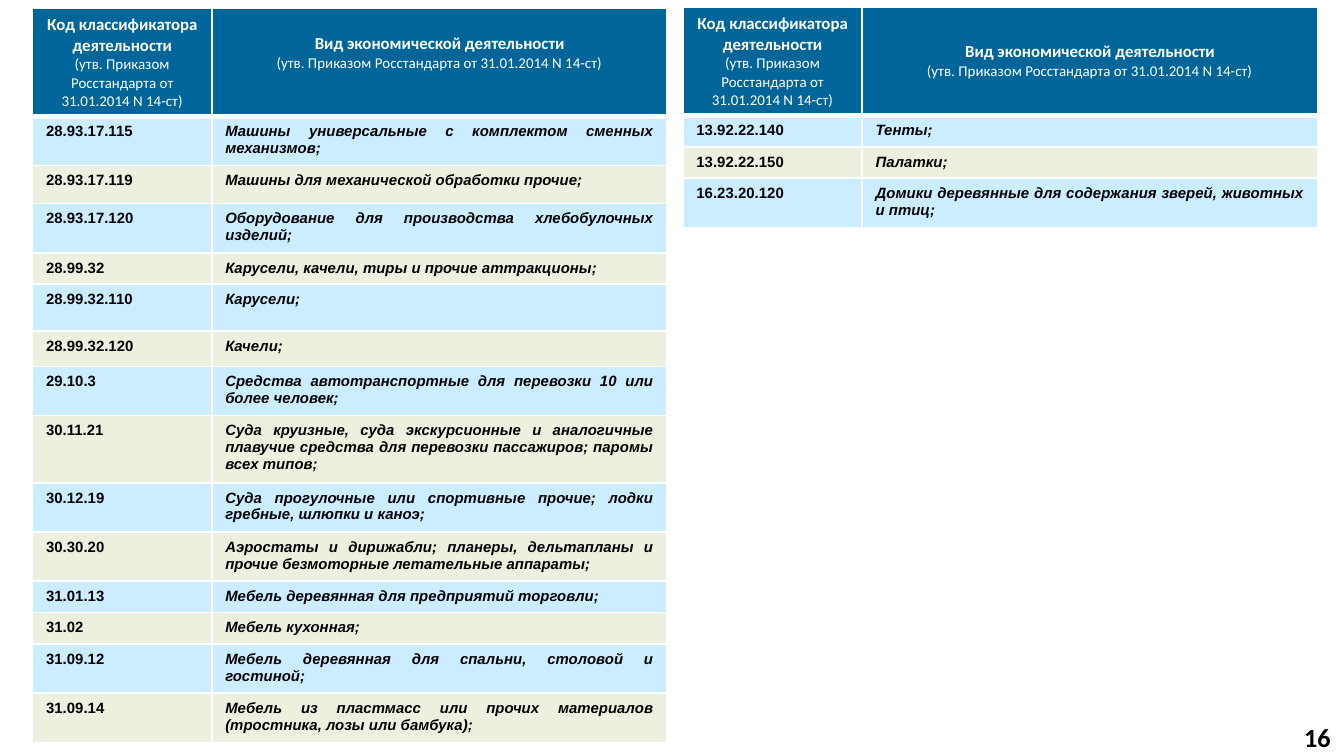
from lxml import etree
from pptx import Presentation
from pptx.dml.color import RGBColor
from pptx.enum.text import MSO_ANCHOR, PP_ALIGN
from pptx.oxml.ns import qn
from pptx.util import Pt

WHITE = RGBColor(0xFF, 0xFF, 0xFF)
BLACK = RGBColor(0x00, 0x00, 0x00)
HEADER = RGBColor(0x00, 0x66, 0x99)
BANDS = [RGBColor(0xCC, 0xEC, 0xFF), RGBColor(0xEB, 0xF1, 0xDE)]

ORDER = "(утв. Приказом Росстандарта от 31.01.2014 N 14-ст)"
HEADINGS = ["Код классификатора деятельности", "Вид экономической деятельности"]
COL_WIDTHS = [96, 244]
HEADER_HEIGHT = 58

LEFT_ROWS = [
    ("28.93.17.115", "Машины универсальные с комплектом сменных механизмов;", 25.4),
    ("28.93.17.119", "Машины для механической обработки прочие;", 20.4),
    ("28.93.17.120", "Оборудование для производства хлебобулочных изделий;", 26.2),
    ("28.99.32", "Карусели, качели, тиры и прочие аттракционы;", 16),
    ("28.99.32.110", "Карусели;", 25),
    ("28.99.32.120", "Качели;", 19),
    ("29.10.3", "Средства автотранспортные для перевозки 10 или более человек;", 25.2),
    ("30.11.21", "Суда круизные, суда экскурсионные и аналогичные плавучие средства "
                 "для перевозки пассажиров; паромы всех типов;", 34.4),
    ("30.12.19", "Суда прогулочные или спортивные прочие; лодки гребные, шлюпки и каноэ;", 25.2),
    ("30.30.20", "Аэростаты и дирижабли; планеры, дельтапланы и прочие безмоторные "
                 "летательные аппараты;", 25.2),
    ("31.01.13", "Мебель деревянная для предприятий торговли;", 16.2),
    ("31.02", "Мебель кухонная;", 16.2),
    ("31.09.12", "Мебель деревянная для спальни, столовой и гостиной;", 25.2),
    ("31.09.14", "Мебель из пластмасс или прочих материалов (тростника, лозы или бамбука);", 25),
]
RIGHT_ROWS = [
    ("13.92.22.140", "Тенты;", 16.2),
    ("13.92.22.150", "Палатки;", 16.2),
    ("16.23.20.120", "Домики деревянные для содержания зверей, животных и птиц;", 25.2),
]
TABLES = [
    (17.5, 4.3, LEFT_ROWS, 13.2),
    (365.9, 3.8, RIGHT_ROWS, 3.6),
]


def write(p, text, align, color, **font):
    p.alignment = align
    r = p.add_run()
    r.text = text
    r.font.color.rgb = color
    for name, value in font.items():
        setattr(r.font, name, value)


def style_cell(cell, color, top, bottom):
    tcPr = cell._tc.get_or_add_tcPr()
    for tag, width in {"a:lnL": 1, "a:lnR": 1, "a:lnT": top, "a:lnB": bottom}.items():
        ln = etree.SubElement(tcPr, qn(tag), w=str(Pt(width)))
        fill = etree.SubElement(ln, qn("a:solidFill"))
        etree.SubElement(fill, qn("a:srgbClr"), val=str(WHITE))
    cell.fill.solid()
    cell.fill.fore_color.rgb = color


prs = Presentation()
prs.slide_width, prs.slide_height = Pt(720), Pt(405)
s = prs.slides.add_slide(prs.slide_layouts[6])

sp = s.shapes.add_textbox(Pt(679.7), Pt(383.8), Pt(40.3), Pt(21.6))
tf = sp.text_frame
tf.word_wrap = True
tf.vertical_anchor = MSO_ANCHOR.MIDDLE
tf.margin_right = Pt(7.2)
write(tf.paragraphs[0], "16", PP_ALIGN.RIGHT, BLACK, name="Calibri", size=Pt(14), bold=True)

for left, top, rows, title_margin in TABLES:
    heights = [HEADER_HEIGHT] + [height for _, _, height in rows]
    frame = s.shapes.add_table(len(heights), 2, Pt(left), Pt(top),
                               Pt(sum(COL_WIDTHS)), Pt(sum(heights)))
    table = frame.table
    for column, width in zip(table.columns, COL_WIDTHS):
        column.width = Pt(width)
    for row, height in zip(table.rows, heights):
        row.height = Pt(height)

    for j, heading in enumerate(HEADINGS):
        cell = table.cell(0, j)
        style_cell(cell, HEADER, 1, 3)
        cell.vertical_anchor = MSO_ANCHOR.MIDDLE
        tf = cell.text_frame
        write(tf.paragraphs[0], heading, PP_ALIGN.CENTER, WHITE,
              name="Calibri", size=Pt(9), bold=True)
        write(tf.add_paragraph(), ORDER, PP_ALIGN.CENTER, WHITE,
              name="Calibri", size=Pt(8), bold=False)
    table.cell(0, 1).margin_bottom = Pt(title_margin)

    for i, (code, activity, _) in enumerate(rows, 1):
        for j, text in enumerate((code, activity)):
            cell = table.cell(i, j)
            style_cell(cell, BANDS[(i - 1) % 2], 3 if i == 1 else 1, 1)
            write(cell.text_frame.paragraphs[0], text, PP_ALIGN.JUSTIFY, BLACK,
                  name="Arial", size=Pt(8), bold=True, italic=j == 1)

prs.save("out.pptx")
